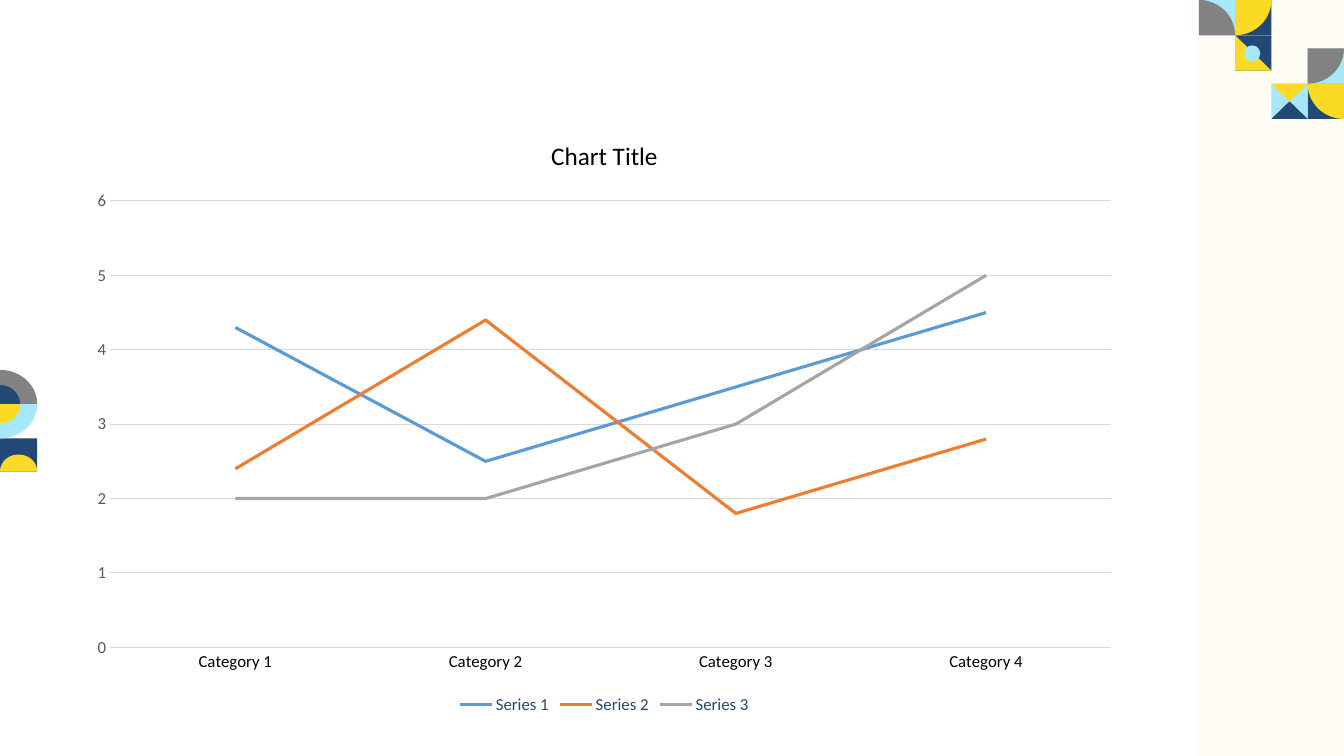
"""Build a line chart slide with geometric tile decoration."""
from math import cos, radians, sin

from pptx import Presentation
from pptx.chart.data import CategoryChartData
from pptx.dml.color import RGBColor
from pptx.enum.chart import XL_CHART_TYPE as ChartType
from pptx.enum.chart import XL_LEGEND_POSITION as LegendPosition
from pptx.enum.chart import XL_TICK_MARK as TickMark
from pptx.enum.shapes import MSO_SHAPE as Shape
from pptx.util import Pt

PX = 9144
FONT = "Calibri"
COLORS = {
    "cream": "FFFCF3", "navy": "214876", "yellow": "FADA23", "sky": "A6E7F9",
    "gray": "828282", "black": "000000", "axis": "595959", "grid": "D9D9D9",
    "legend": "224976", "blue": "5B9BD5", "orange": "ED7D31", "silver": "A5A5A5",
}
CATEGORIES = ["Category 1", "Category 2", "Category 3", "Category 4"]
SERIES = [
    ("Series 1", (4.3, 2.5, 3.5, 4.5), "blue"),
    ("Series 2", (2.4, 4.4, 1.8, 2.8), "orange"),
    ("Series 3", (2, 2, 3, 5), "silver"),
]
TILE_WIDTH, TILE_HEIGHT = 36, 35
COLUMNS = [1189 + TILE_WIDTH * column for column in range(4)]
UPPER, LOWER = 0, 48


class SlideBuilder:
    """Hold the style and the current slide, and add elements to it."""

    def __init__(self, deck):
        self.page = deck.slides.add_slide(deck.slide_layouts[6])

    def color(self, name):
        return RGBColor.from_string(COLORS[name])

    def paint(self, shape, fill):
        shape.shadow.inherit = False
        shape.fill.solid()
        shape.fill.fore_color.rgb = self.color(fill)
        shape.line.fill.background()

    def preset(self, kind, left, top, width, height, fill):
        box = [value * PX for value in (left, top, width, height)]
        self.paint(self.page.shapes.add_shape(kind, *box), fill)

    def tile(self, left, top, fill):
        self.preset(Shape.RECTANGLE, left, top, TILE_WIDTH, TILE_HEIGHT, fill)

    def polygon(self, points, fill):
        points = [(round(x * PX), round(y * PX)) for x, y in points]
        outline = self.page.shapes.build_freeform(*points[0], scale=1.0)
        outline.add_line_segments(points[1:], close=True)
        self.paint(outline.convert_to_shape(), fill)

    def wedge(self, center, radii, start, sweep, fill):
        (x, y), (across, down) = center, radii
        angles = [radians(start + sweep * step / 30) for step in range(31)]
        arc = [(x + across * cos(angle), y + down * sin(angle)) for angle in angles]
        self.polygon([center] + arc, fill)

    def style_font(self, font, size, color):
        font.name = FONT
        font.size = Pt(size)
        font.bold = False
        font.color.rgb = self.color(color)

    def style_line(self, line, width, color):
        line.color.rgb = self.color(color)
        line.width = Pt(width)

    def line_chart(self, left, top, width, height, title):
        data = CategoryChartData()
        data.categories = CATEGORIES
        for name, values, _ in SERIES:
            data.add_series(name, values)
        box = [value * PX for value in (left, top, width, height)]
        chart = self.page.shapes.add_chart(ChartType.LINE, *box, data).chart
        self.style_font(chart.font, 10, "black")

        chart.has_title = True
        heading = chart.chart_title.text_frame
        heading.text = title
        self.style_font(heading.paragraphs[0].runs[0].font, 18, "black")
        chart.chart_title.include_in_layout = False

        chart.has_legend = True
        chart.legend.position = LegendPosition.BOTTOM
        chart.legend.include_in_layout = False
        self.style_font(chart.legend.font, 12, "legend")

        for axis, color in ((chart.category_axis, "black"), (chart.value_axis, "axis")):
            axis.major_tick_mark = axis.minor_tick_mark = TickMark.NONE
            self.style_font(axis.tick_labels.font, 12, color)
        self.style_line(chart.category_axis.format.line, 0.75, "grid")
        scale = chart.value_axis
        scale.minimum_scale, scale.maximum_scale, scale.major_unit = 0, 6, 1
        scale.format.line.fill.background()
        scale.has_major_gridlines = True
        self.style_line(scale.major_gridlines.format.line, 0.75, "grid")

        plot = chart.plots[0]
        plot.vary_by_categories = False
        for series, (_, _, color) in zip(plot.series, SERIES):
            series.smooth = False
            self.style_line(series.format.line, 2.25, color)


def draw_corner(slide):
    first, second, third, fourth = COLUMNS
    right = fourth + TILE_WIDTH
    radii = TILE_WIDTH, TILE_HEIGHT
    upper_next, lower_next = UPPER + TILE_HEIGHT, LOWER + TILE_HEIGHT
    bottom = lower_next + TILE_HEIGHT
    for left, top, fill in (
        (second, UPPER, "navy"), (first, UPPER, "sky"), (second, upper_next, "navy"),
        (fourth, lower_next, "navy"), (fourth, LOWER, "sky"), (third, lower_next, "sky"),
    ):
        slide.tile(left, top, fill)
    for center, start, fill in (
        ((second, UPPER), 0, "yellow"), ((first, upper_next), 270, "gray"),
        ((right, lower_next), 90, "yellow"), ((fourth, LOWER), 0, "gray"),
    ):
        slide.wedge(center, radii, start, 90, fill)
    end = upper_next + TILE_HEIGHT
    slide.polygon([(second, upper_next), (second, end), (third, end)], "yellow")
    slide.preset(Shape.OVAL, 1234, 45, 16, 16, "sky")
    middle = third + TILE_WIDTH / 2, lower_next + TILE_HEIGHT / 2
    for edge, fill in ((bottom, "navy"), (lower_next, "yellow")):
        slide.polygon([middle, (third, edge), (fourth, edge)], fill)


def draw_left_edge(slide):
    slide.preset(Shape.RECTANGLE, 0, 435, 37, 33, "navy")
    slide.wedge((18.5, 468), (18.5, 17), 180, 180, "yellow")
    for start, outer, inner in ((270, "gray", "navy"), (0, "sky", "yellow")):
        slide.wedge((0, 401), (37, 34), start, 90, outer)
        slide.wedge((0, 401), (20, 19), start, 90, inner)


def main():
    deck = Presentation()
    deck.slide_width, deck.slide_height = 1333 * PX, 750 * PX
    slide = SlideBuilder(deck)
    slide.preset(Shape.RECTANGLE, 1188, 0, 145, 750, "cream")
    draw_corner(slide)
    draw_left_edge(slide)
    slide.line_chart(76, 115, 1047, 598, "Chart Title")
    deck.save("out.pptx")


if __name__ == "__main__":
    main()
